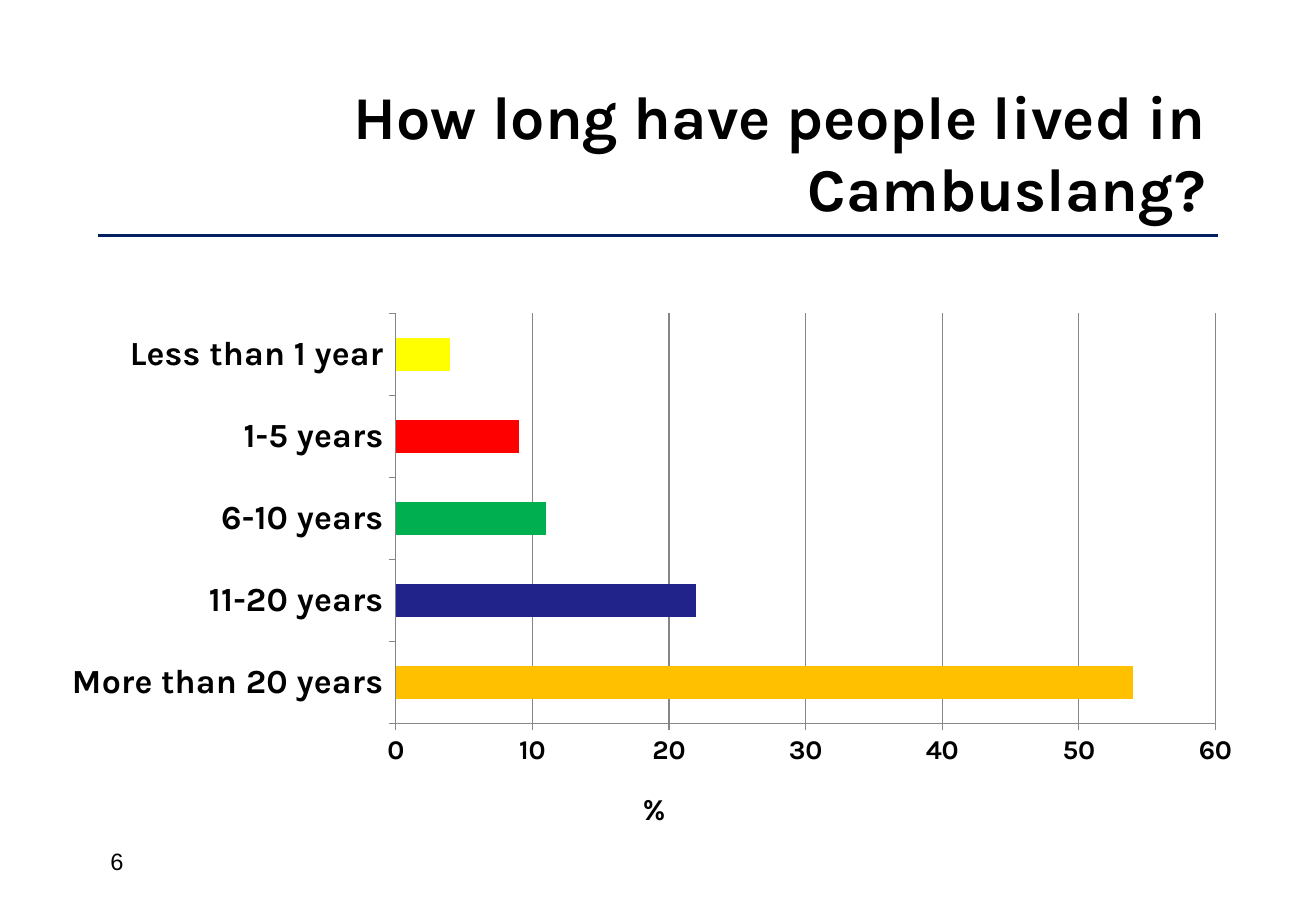
"""Build a slide with a bar chart of how long people have lived in Cambuslang."""
from lxml import etree
from pptx import Presentation
from pptx.chart.data import CategoryChartData
from pptx.dml.color import RGBColor
from pptx.enum.chart import XL_CHART_TYPE as ChartType, XL_TICK_MARK as Tick
from pptx.enum.shapes import MSO_CONNECTOR as Connector
from pptx.enum.text import MSO_ANCHOR as Anchor, PP_ALIGN as Align
from pptx.oxml import parse_xml
from pptx.oxml.ns import nsdecls, qn
from pptx.util import Inches, Pt

TITLE = "How long have people lived in Cambuslang?"
PAGE_NUMBER = "6"
AXIS_TITLE = "%"
RESIDENCE = [
    ("More than 20 years", 54, "FFC000"),
    ("11-20 years", 22, "22228B"),
    ("6-10 years", 11, "00B050"),
    ("1-5 years", 9, "FF0000"),
    ("Less than 1 year", 4, "FFFF00"),
]
BLACK, NAVY, GREY, GREEN = "000000", "002060", "868686", "00CC99"
LEFT, WIDTH, RULE_TOP = 0.81, 9.21, 1.94
PLOT_LAYOUT = {"x": 0.29, "y": 0.02, "w": 0.68, "h": 0.75}
AXIS_TITLE_LAYOUT = {"x": 0.49, "y": 0.88}


def colour(value):
    return RGBColor.from_string(value)


def set_font(font, name, size, bold=False):
    font.name, font.size, font.bold = name, Pt(size), bold
    font.color.rgb = colour(BLACK)


def add_text(page, text, place, font, align=Align.LEFT, anchor=Anchor.TOP):
    box = page.shapes.add_textbox(*map(Inches, place))
    frame = box.text_frame
    frame.word_wrap = True
    frame.vertical_anchor = anchor
    frame.text = text
    para = frame.paragraphs[0]
    para.alignment = align
    set_font(para.runs[0].font, *font)


def add_rule(page):
    rule = page.shapes.add_connector(
        Connector.STRAIGHT, Inches(LEFT), Inches(RULE_TOP),
        Inches(LEFT + WIDTH), Inches(RULE_TOP))
    rule.line.color.rgb = colour(NAVY)
    rule.line.width = Pt(2)
    etree.SubElement(rule._element.spPr, qn("a:effectLst"))


def manual_layout(places, inner=False):
    target = '<c:layoutTarget val="inner"/>' if inner else ""
    modes = "".join(f'<c:{side}Mode val="edge"/>' for side in "xy")
    sizes = "".join(f'<c:{side} val="{value}"/>' for side, value in places.items())
    return parse_xml(f'<c:layout {nsdecls("c")}><c:manualLayout>'
                     f"{target}{modes}{sizes}</c:manualLayout></c:layout>")


def style_axis(axis, size):
    axis.major_tick_mark, axis.minor_tick_mark = Tick.OUTSIDE, Tick.NONE
    set_font(axis.tick_labels.font, "Karla", size, True)
    axis.format.line.color.rgb = colour(GREY)
    axis.format.line.width = Pt(0.75)


def add_residence_chart(page):
    labels, values, fills = zip(*RESIDENCE)
    data = CategoryChartData(number_format="0")
    data.categories = labels
    data.add_series("Series 1", values)
    chart = page.shapes.add_chart(
        ChartType.BAR_CLUSTERED, *map(Inches, (0.38, 2.49, 9.92, 4.5)), data).chart
    chart.has_legend = chart.has_title = False
    set_font(chart.font, "Karla", 10)

    plot = chart.plots[0]
    plot.gap_width = 150
    plot.vary_by_categories = False
    series = plot.series[0]
    series.format.fill.solid()
    series.format.fill.fore_color.rgb = colour(GREEN)
    for index, fill in enumerate(fills):
        bar = series.points[index].format.fill
        bar.solid()
        bar.fore_color.rgb = colour(fill)

    style_axis(chart.category_axis, 20)
    percent = chart.value_axis
    style_axis(percent, 16)
    percent.minimum_scale, percent.maximum_scale, percent.major_unit = 0, 60, 10
    percent.tick_labels.number_format = "0"
    percent.tick_labels.number_format_is_linked = False
    percent.has_major_gridlines = True
    grid = percent.major_gridlines.format.line
    grid.color.rgb = colour(GREY)
    grid.width = Pt(0.75)
    frame = percent.axis_title.text_frame
    frame.text = AXIS_TITLE
    set_font(frame.paragraphs[0].runs[0].font, "Karla", 18, True)

    area = chart._chartSpace.chart.plotArea
    for layout in area.findall(qn("c:layout")):
        area.remove(layout)
    area.insert(0, manual_layout(PLOT_LAYOUT, inner=True))
    title = percent.axis_title._element
    for layout in title.findall(qn("c:layout")):
        title.remove(layout)
    title.find(qn("c:tx")).addnext(manual_layout(AXIS_TITLE_LAYOUT))


def main():
    deck = Presentation()
    deck.slide_width, deck.slide_height = Inches(10.83), Inches(7.5)
    page = deck.slides.add_slide(deck.slide_layouts[6])
    add_rule(page)
    add_text(page, TITLE, (LEFT, 0.58, WIDTH, 1.33), ("Karla", 36, True),
             Align.RIGHT, Anchor.MIDDLE)
    add_text(page, PAGE_NUMBER, (LEFT, 6.92, 0.9, 0.33), ("Arial", 14))
    add_residence_chart(page)
    deck.save("out.pptx")


if __name__ == "__main__":
    main()
